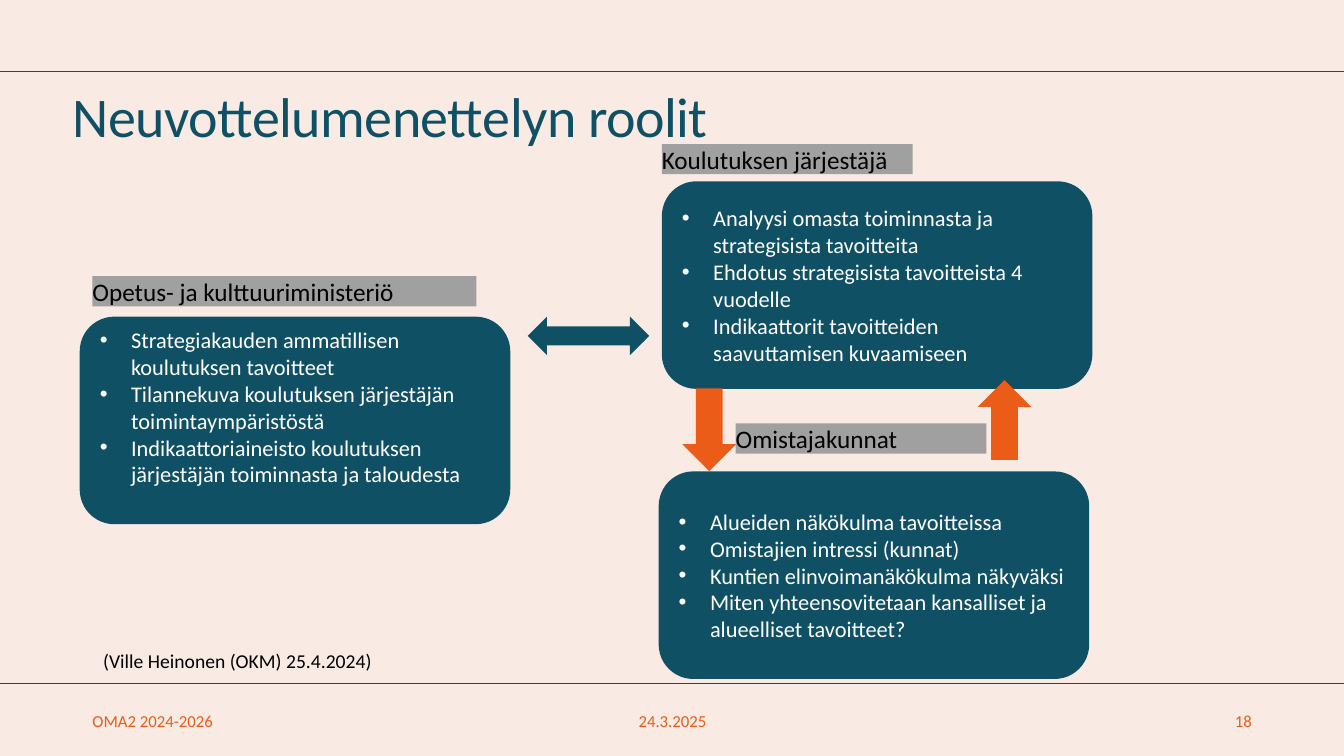
from lxml import etree
from pptx import Presentation
from pptx import util as u
from pptx.dml.color import RGBColor
from pptx.enum import shapes, text
from pptx.oxml.ns import qn

PETROL, ORANGE, GREY = "0F5064", "EB5C18", "A0A0A0"
WHITE, BLACK, CREAM, RULE = "FFFFFF", "000000", "F9EBE3", "115064"
KIND = shapes.MSO_SHAPE
ALIGN = text.PP_ALIGN
ANCHOR = text.MSO_ANCHOR


def paint(target, hex_color):
    if hasattr(target, "solid"):
        target.solid()
        target = target.fore_color
    target.rgb = RGBColor.from_string(hex_color)


def write(frame, lines, size=18, color=BLACK, align=ALIGN.LEFT, anchor=ANCHOR.TOP,
          bullet=None, spacing=None, tracking=None, grow=False):
    frame.word_wrap = True
    frame.auto_size = text.MSO_AUTO_SIZE.SHAPE_TO_FIT_TEXT if grow else text.MSO_AUTO_SIZE.NONE
    frame.vertical_anchor = anchor
    for number, line in enumerate(lines):
        paragraph = frame.add_paragraph() if number else frame.paragraphs[0]
        if bullet:
            properties = paragraph._p.get_or_add_pPr()
            indent = u.Cm(0.79)
            properties.set("marL", str(indent))
            properties.set("indent", str(-indent))
            etree.SubElement(properties, qn("a:buFont")).set("typeface", "Arial")
            etree.SubElement(properties, qn("a:buChar")).set("char", bullet)
        paragraph.alignment = align
        if spacing:
            paragraph.line_spacing = spacing
        run = paragraph.add_run()
        run.text = line
        run.font.name = "Calibri"
        run.font.size = u.Pt(size)
        paint(run.font.color, color)
        if tracking:
            run.font._element.set("spc", str(tracking))


class RoleSlide:
    """Draws the elements of the roles slide in one shared style."""

    def __init__(self, deck):
        self.slide = deck.slides.add_slide(deck.slide_layouts[5])
        paint(self.slide.background.fill, CREAM)

    def margins(self, frame, size=0):
        frame.margin_left = frame.margin_top = u.Cm(size)
        frame.margin_right = frame.margin_bottom = u.Cm(size)

    def title(self, words, left, top, width, height):
        heading = self.slide.shapes.title
        heading.left, heading.top = u.Cm(left), u.Cm(top)
        heading.width, heading.height = u.Cm(width), u.Cm(height)
        self.margins(heading.text_frame)
        write(heading.text_frame, [words], size=40, color=PETROL, spacing=0.83, tracking=-40)

    def rule(self, top):
        line = self.slide.shapes.add_connector(
            shapes.MSO_CONNECTOR.STRAIGHT, 0, u.Cm(top), u.Cm(33.87), u.Cm(top))
        line.line.width = u.Pt(0.48)
        paint(line.line.color, RULE)
        etree.SubElement(line._element.spPr, qn("a:effectLst"))

    def block(self, kind, left, top, width, height, fill):
        block = self.slide.shapes.add_shape(
            kind, u.Cm(left), u.Cm(top), u.Cm(width), u.Cm(height))
        block.shadow.inherit = False
        paint(block.fill, fill)
        block.line.fill.background()
        return block

    def card(self, left, top, tasks, bottom=0.13):
        frame = self.block(KIND.ROUNDED_RECTANGLE, left, top, 10.85, 5.23, PETROL).text_frame
        frame.margin_bottom = u.Cm(bottom)
        write(frame, tasks, size=16, color=WHITE, anchor=ANCHOR.MIDDLE, bullet="•")

    def label(self, words, left, top, width):
        frame = self.block(KIND.RECTANGLE, left, top, width, 0.76, GREY).text_frame
        self.margins(frame)
        write(frame, [words], grow=True)

    def note(self, words, left, top, width, height, **style):
        box = self.slide.shapes.add_textbox(u.Cm(left), u.Cm(top), u.Cm(width), u.Cm(height))
        self.margins(box.text_frame)
        write(box.text_frame, [words], **style)


def main():
    deck = Presentation()
    deck.slide_width, deck.slide_height = u.Cm(33.87), u.Cm(19.05)
    page = RoleSlide(deck)
    for top in (1.8, 17.22):
        page.rule(top)
    page.title("Neuvottelumenettelyn roolit", 1.83, 2.34, 29.72, 3.18)

    page.card(2.01, 7.98, [
        "Strategiakauden ammatillisen koulutuksen tavoitteet",
        "Tilannekuva koulutuksen järjestäjän toimintaympäristöstä",
        "Indikaattoriaineisto koulutuksen järjestäjän toiminnasta ja taloudesta",
    ], bottom=0.81)
    page.card(16.68, 4.57, [
        "Analyysi omasta toiminnasta ja strategisista tavoitteita",
        "Ehdotus strategisista tavoitteista 4 vuodelle",
        "Indikaattorit tavoitteiden saavuttamisen kuvaamiseen",
    ])
    page.card(16.6, 11.88, [
        "Alueiden näkökulma tavoitteissa",
        "Omistajien intressi (kunnat)",
        "Kuntien elinvoimanäkökulma näkyväksi",
        "Miten yhteensovitetaan kansalliset ja alueelliset tavoitteet?",
    ])

    page.label("Opetus- ja kulttuuriministeriö", 2.33, 6.96, 9.68)
    page.label("Koulutuksen järjestäjä", 16.68, 3.63, 6.32)
    page.label("Omistajakunnat", 18.54, 10.67, 6.32)

    page.block(KIND.UP_ARROW, 24.64, 9.58, 1.35, 2.01, ORANGE)
    page.block(KIND.DOWN_ARROW, 17.2, 9.79, 1.35, 2.08, ORANGE)
    page.block(KIND.LEFT_RIGHT_ARROW, 13.3, 7.98, 3.06, 0.97, PETROL)

    page.note("(Ville Heinonen (OKM) 25.4.2024)", 2.6, 16.34, 9.07, 0.6, size=14, grow=True)
    for words, left, width, align in (
        ("OMA2 2024-2026", 2.33, 10.21, ALIGN.LEFT),
        ("24.3.2025", 13.86, 6.18, ALIGN.CENTER),
        ("18", 23.93, 7.62, ALIGN.RIGHT),
    ):
        page.note(words, left, 17.69, width, 0.97, size=12, color=ORANGE,
                  align=align, anchor=ANCHOR.MIDDLE)
    deck.save("out.pptx")


if __name__ == "__main__":
    main()
